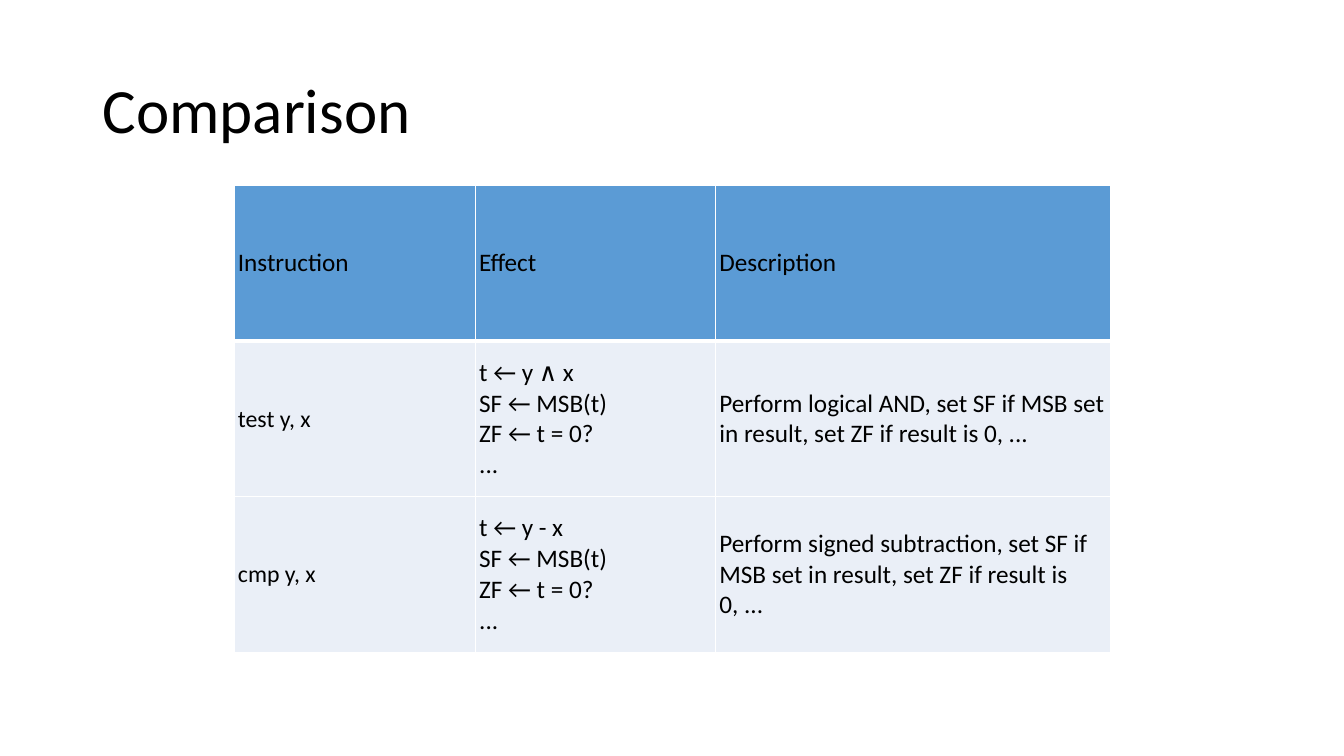
from dataclasses import dataclass

from lxml.etree import SubElement
from pptx import Presentation
from pptx.dml.color import RGBColor as Color
from pptx.enum.text import MSO_ANCHOR as Anchor
from pptx.oxml.ns import qn
from pptx.util import Inches, Pt


@dataclass(frozen=True)
class Theme:
    """Hold the colours, font and type sizes of the slide."""
    font: str = "Calibri"
    ink: str = "000000"
    head: str = "5B9BD5"
    body: str = "EAEFF7"
    rule: str = "FFFFFF"
    title: float = 45
    text: float = 18
    code: float = 17
    thin: float = 1
    thick: float = 3


THEME = Theme()
EFFECT = "t ← y {} x\nSF ← MSB(t)\nZF ← t = 0?\n..."
ROWS = [
    ("Instruction", "Effect", "Description"),
    ("test y, x", EFFECT.format("∧"),
     "Perform logical AND, set SF if MSB set in result, "
     "set ZF if result is 0, ..."),
    ("cmp y, x", EFFECT.format("-"),
     "Perform signed subtraction, set SF if MSB set in result, "
     "set ZF if result is 0, ..."),
]
SHARES = (2.39, 2.38, 3.92)


def write(frame, text, size):
    """Put one styled paragraph into a text frame."""
    para = frame.paragraphs[0]
    para.text = text
    para.font.name = THEME.font
    para.font.size = Pt(size)
    para.font.bold = False
    para.font.color.rgb = Color.from_string(THEME.ink)
    return para


def add_title(slide, left, top, width, height):
    """Place the slide title, centred vertically in its box."""
    box = slide.shapes.add_textbox(
        Inches(left), Inches(top), Inches(width), Inches(height))
    frame = box.text_frame
    frame.word_wrap = True
    frame.vertical_anchor = Anchor.MIDDLE
    write(frame, "Comparison", THEME.title).line_spacing = 0.9


def add_edges(cell, top, low):
    """Draw the four borders of a cell, given the top and bottom weights."""
    props = cell._tc.get_or_add_tcPr()
    weights = {"L": THEME.thin, "R": THEME.thin, "T": top, "B": low}
    for at, (side, weight) in enumerate(weights.items()):
        line = SubElement(props, qn(f"a:ln{side}"), w=str(Pt(weight)))
        fill = SubElement(line, qn("a:solidFill"))
        SubElement(fill, qn("a:srgbClr"), val=THEME.rule)
        props.insert(at, line)


def add_grid(slide, left, top, width, height):
    """Place the instruction table, with equal rows and shared-out columns."""
    table = slide.shapes.add_table(
        len(ROWS), len(SHARES), Inches(left), Inches(top),
        Inches(width), Inches(height)).table
    table.first_row = table.horz_banding = False
    for col, share in zip(table.columns, SHARES):
        col.width = Inches(width * share / sum(SHARES))
    for r, texts in enumerate(ROWS):
        table.rows[r].height = Inches(height / len(ROWS))
        for c, text in enumerate(texts):
            cell = table.cell(r, c)
            cell.vertical_anchor = Anchor.MIDDLE
            cell.margin_left = cell.margin_right = Inches(0.04)
            cell.margin_top = cell.margin_bottom = Inches(0.04)
            cell.fill.solid()
            cell.fill.fore_color.rgb = Color.from_string(
                THEME.body if r else THEME.head)
            add_edges(cell, THEME.thick if r == 1 else THEME.thin,
                      THEME.thin if r else THEME.thick)
            write(cell.text_frame, text,
                  THEME.code if r and not c else THEME.text)


def main():
    """Build the slide and save it."""
    deck = Presentation()
    deck.slide_width, deck.slide_height = Inches(13.33), Inches(7.5)
    slide = deck.slides.add_slide(deck.slide_layouts[6])
    add_title(slide, 0.92, 0.4, 11.5, 1.45)
    add_grid(slide, 2.32, 1.84, 8.7, 4.63)
    deck.save("out.pptx")


if __name__ == "__main__":
    main()
